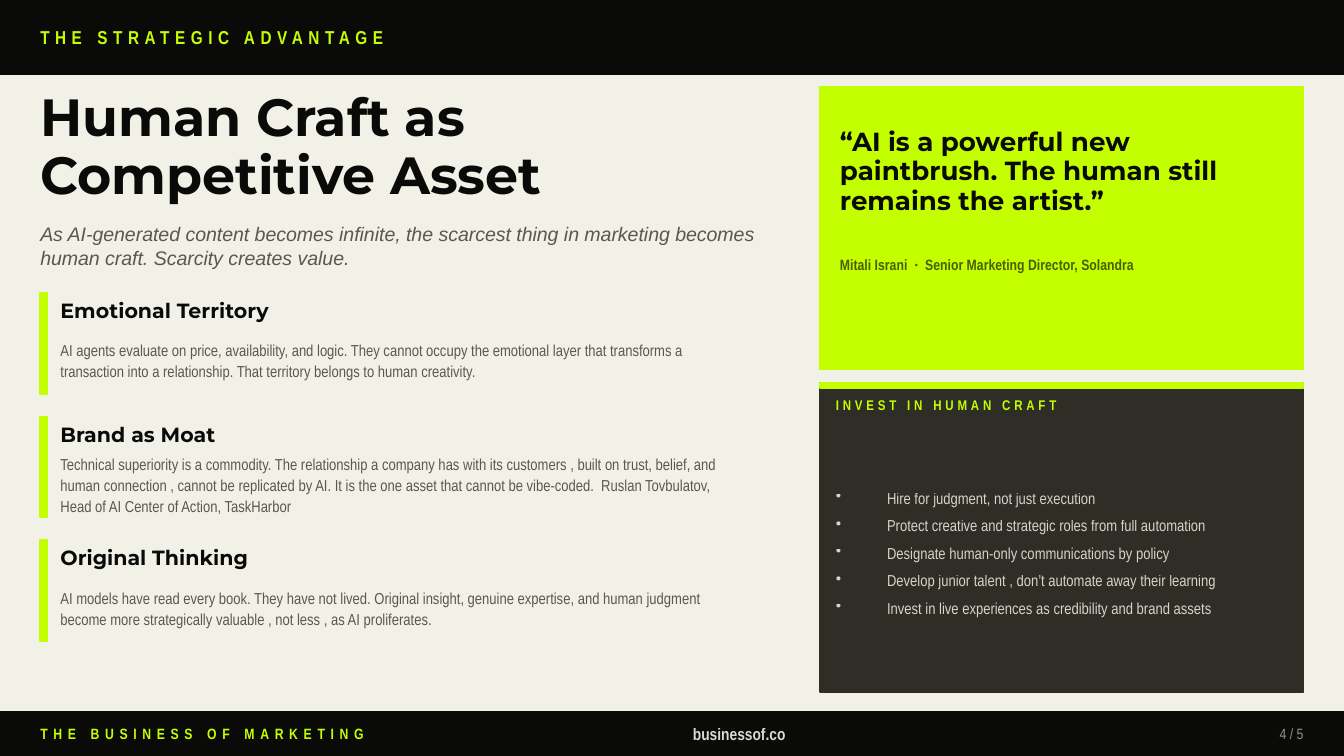
from lxml.etree import SubElement
from pptx import Presentation
from pptx.dml.color import RGBColor
from pptx.enum.shapes import MSO_SHAPE as SHAPE
from pptx.enum.text import MSO_ANCHOR as ANCHOR, MSO_AUTO_SIZE as AUTO, PP_ALIGN as ALIGN
from pptx.oxml.ns import qn
from pptx.util import Emu, Pt

PX = 4572  # EMU per px, 200 px to the inch
BLACK, LIME, CREAM, GREY, DARK = "0A0A08", "C4FF00", "F2F1E8", "5A5950", "2E2E26"
HEAD, BODY, NARROW = "Montserrat", "Arial", "Arial Narrow"

POINTS = [
    ("Emotional Territory",
     "AI agents evaluate on price, availability, and logic. They cannot occupy the "
     "emotional layer that transforms a transaction into a relationship. That "
     "territory belongs to human creativity."),
    ("Brand as Moat",
     "Technical superiority is a commodity. The relationship a company has with its "
     "customers , built on trust, belief, and human connection , cannot be replicated "
     "by AI. It is the one asset that cannot be vibe-coded.  Ruslan Tovbulatov, Head "
     "of AI Center of Action, TaskHarbor"),
    ("Original Thinking",
     "AI models have read every book. They have not lived. Original insight, genuine "
     "expertise, and human judgment become more strategically valuable , not less , "
     "as AI proliferates."),
]
ACTIONS = [
    "Hire for judgment, not just execution",
    "Protect creative and strategic roles from full automation",
    "Designate human-only communications by policy",
    "Develop junior talent , don’t automate away their learning",
    "Invest in live experiences as credibility and brand assets",
]


def px(n):
    return Emu(n * PX)


def paint(color, value):
    color.rgb = RGBColor.from_string(value)


def add_rect(s, x, y, w, h, color):
    sp = s.shapes.add_shape(SHAPE.RECTANGLE, px(x), px(y), px(w), px(h))
    sp.shadow.inherit = False
    sp.fill.solid()
    paint(sp.fill.fore_color, color)
    paint(sp.line.color, color)
    sp.line.width = Pt(1)


def add_bullet(p, indent):
    pPr = p._p.get_or_add_pPr()
    pPr.set("marL", str(px(indent)))
    pPr.set("indent", str(-px(indent)))
    SubElement(pPr, qn("a:buChar")).set("char", "•")


def write(tf, lines, size, font, color, bold=False, italic=False, tracking=0,
          opacity=100, align=ALIGN.LEFT, leading=None, after=None, bullet=0):
    tf.word_wrap = True
    tf.auto_size = AUTO.NONE
    tf.vertical_anchor = ANCHOR.MIDDLE
    tf.margin_left = tf.margin_right = tf.margin_top = tf.margin_bottom = 0
    for i, line in enumerate(lines):
        p = tf.add_paragraph() if i else tf.paragraphs[0]
        if bullet:
            add_bullet(p, bullet)
        p.alignment = align
        if leading:
            p.line_spacing = leading
        if after:
            p.space_after = Pt(after)
        r = p.add_run()
        r.text = line
        r.font.size, r.font.name = Pt(size), font
        r.font.bold, r.font.italic = bold, italic
        paint(r.font.color, color)
        rPr = r._r.get_or_add_rPr()
        if tracking:
            rPr.set("spc", str(tracking * 100))
        if opacity < 100:
            clr = rPr.find(qn("a:solidFill"))[0]
            SubElement(clr, qn("a:alpha")).set("val", str(opacity * 1000))


def add_text(s, x, y, w, h, lines, *style, **options):
    sp = s.shapes.add_textbox(px(x), px(y), px(w), px(h))
    write(sp.text_frame, lines, *style, **options)


def add_title(s, x, y, w, h, lines):
    sp = s.shapes.title
    sp.left, sp.top, sp.width, sp.height = px(x), px(y), px(w), px(h)
    write(sp.text_frame, lines, 28, HEAD, BLACK, bold=True, leading=0.92)


def add_point(s, y, heading, text):
    add_rect(s, 60, y, 10, 150, LIME)
    add_text(s, 90, y, 1020, 52, [heading], 11, HEAD, BLACK, bold=True)
    add_text(s, 90, y + 54, 1020, 92, [text], 8.5, NARROW, GREY, leading=1.1)


def main():
    prs = Presentation()
    prs.slide_width, prs.slide_height = px(2000), px(1125)
    s = prs.slides.add_slide(prs.slide_layouts[5])
    s.background.fill.solid()
    paint(s.background.fill.fore_color, CREAM)

    # Header band
    add_rect(s, 0, 0, 2000, 110, BLACK)
    add_text(s, 60, 0, 1400, 110, ["THE STRATEGIC ADVANTAGE"], 10, NARROW, LIME,
             bold=True, tracking=3)

    # Title and lead
    add_title(s, 60, 130, 1100, 180, ["Human Craft as", "Competitive Asset"])
    add_text(s, 60, 316, 1100, 100,
             ["As AI-generated content becomes infinite, the scarcest thing in marketing "
              "becomes human craft. Scarcity creates value."],
             10.5, BODY, GREY, italic=True)

    # Three points
    for i, (heading, text) in enumerate(POINTS):
        add_point(s, 436 + 184 * i, heading, text)

    # Quote card
    add_rect(s, 1220, 130, 720, 420, LIME)
    add_text(s, 1250, 156, 660, 200,
             ["“AI is a powerful new paintbrush. The human still remains the artist.”"],
             14, HEAD, BLACK, bold=True, leading=0.95)
    add_text(s, 1250, 364, 660, 60,
             ["Mitali Israni  ·  Senior Marketing Director, Solandra"],
             8, NARROW, BLACK, bold=True, opacity=65)

    # Action card
    add_rect(s, 1220, 570, 720, 460, DARK)
    add_rect(s, 1220, 570, 720, 8, LIME)
    add_text(s, 1244, 580, 660, 44, ["INVEST IN HUMAN CRAFT"], 7.5, NARROW, LIME,
             bold=True, tracking=2)
    add_text(s, 1244, 636, 664, 370, ACTIONS, 8.5, NARROW, CREAM, opacity=85,
             leading=1.15, after=3, bullet=76)

    # Footer band
    add_rect(s, 0, 1060, 2000, 66, BLACK)
    add_text(s, 60, 1064, 800, 56, ["THE BUSINESS OF MARKETING"], 8, NARROW, LIME,
             bold=True, tracking=3)
    add_text(s, 760, 1064, 680, 56, ["businessof.co"], 9, NARROW, CREAM,
             bold=True, opacity=90, align=ALIGN.CENTER)
    add_text(s, 1760, 1064, 180, 56, ["4 / 5"], 8, NARROW, CREAM,
             opacity=60, align=ALIGN.RIGHT)

    prs.save("out.pptx")


if __name__ == "__main__":
    main()
